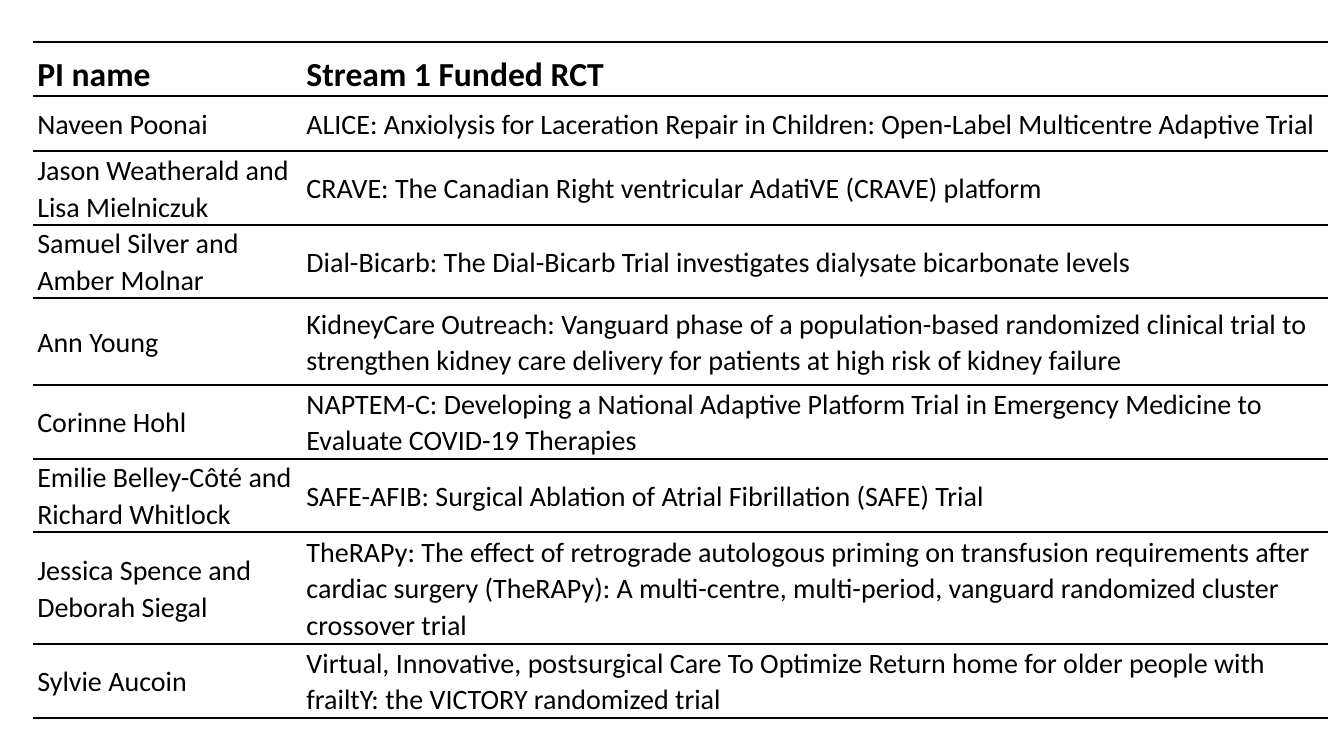
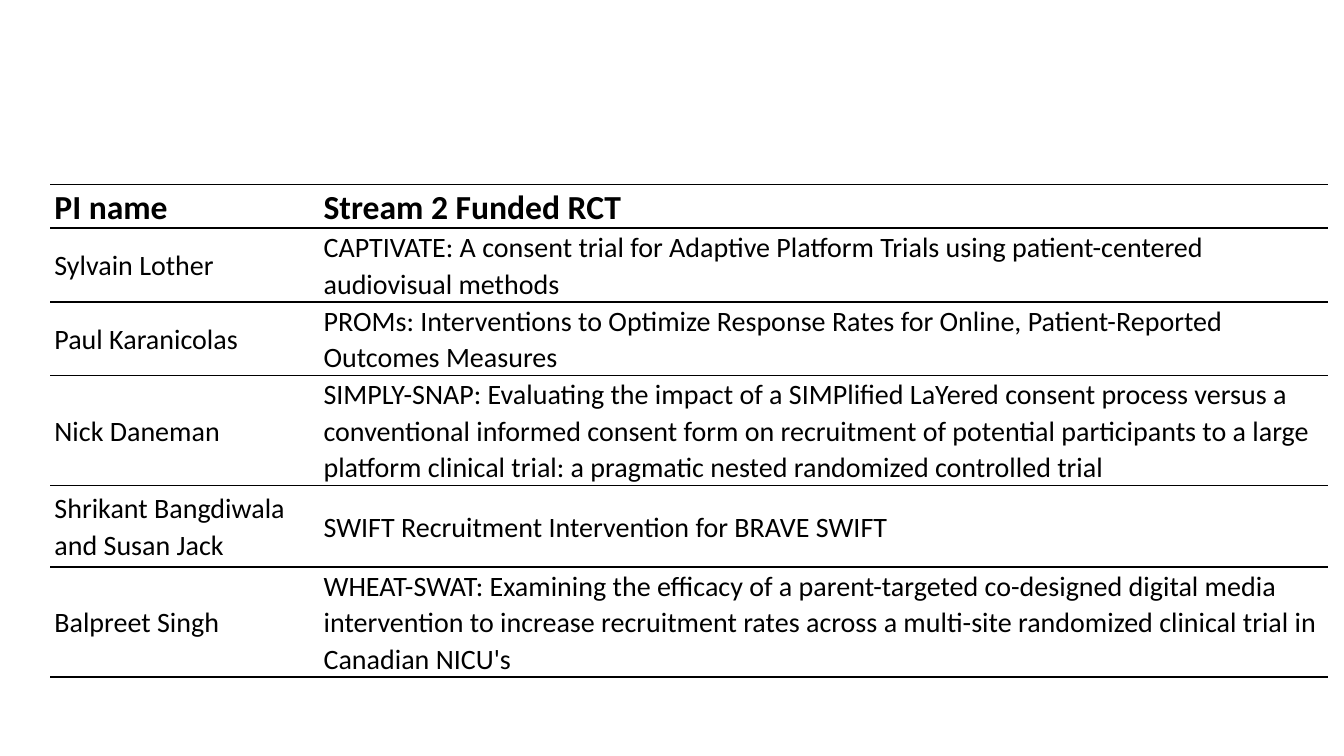
from pptx import Presentation, util as u
from pptx.dml.color import RGBColor
from pptx.enum import text
from pptx.oxml import ns
from lxml import etree

COLOURS = {"ink": "000000", "paper": "FFFFFF"}
FONT = "Calibri"
HEAD_SIZE, BODY_SIZE = 24, 20
LINE_SPACING = 1.07
RULE_WIDTH = 1.5
SIDE_INSET = 0.04
NAME_COLUMN = 2.67

STREAM_1 = [
    (0.53, "PI name", "Stream 1 Funded RCT"),
    (0.55, "Naveen Poonai",
     "ALICE: Anxiolysis for Laceration Repair in Children: Open-Label Multicentre Adaptive Trial"),
    (0.73, "Jason Weatherald and Lisa Mielniczuk",
     "CRAVE: The Canadian Right ventricular AdatiVE (CRAVE) platform"),
    (0.73, "Samuel Silver and Amber Molnar",
     "Dial-Bicarb: The Dial-Bicarb Trial investigates dialysate bicarbonate levels"),
    (0.86, "Ann Young",
     "KidneyCare Outreach: Vanguard phase of a population-based randomized clinical trial to\n"
     "strengthen kidney care delivery for patients at high risk of kidney failure"),
    (0.73, "Corinne Hohl",
     "NAPTEM-C: Developing a National Adaptive Platform Trial in Emergency Medicine to\n"
     "Evaluate COVID-19 Therapies"),
    (0.73, "Emilie Belley-Côté and Richard Whitlock",
     "SAFE-AFIB: Surgical Ablation of Atrial Fibrillation (SAFE) Trial"),
    (1.11, "Jessica Spence and Deborah Siegal",
     "TheRAPy: The effect of retrograde autologous priming on transfusion requirements after\n"
     "cardiac surgery (TheRAPy): A multi-centre, multi-period, vanguard randomized cluster\n"
     "crossover trial"),
    (0.73, "Sylvie Aucoin",
     "Virtual, Innovative, postsurgical Care To Optimize Return home for older people with\n"
     "frailtY: the VICTORY randomized trial"),
]

STREAM_2 = [
    (0.43, "PI name", "Stream 2 Funded RCT"),
    (0.73, "Sylvain Lother",
     "CAPTIVATE: A consent trial for Adaptive Platform Trials using patient-centered\n"
     "audiovisual methods"),
    (0.73, "Paul Karanicolas",
     "PROMs: Interventions to Optimize Response Rates for Online, Patient-Reported\n"
     "Outcomes Measures"),
    (1.09, "Nick Daneman",
     "SIMPLY-SNAP: Evaluating the impact of a SIMPlified LaYered consent process versus a\n"
     "conventional informed consent form on recruitment of potential participants to a large\n"
     "platform clinical trial: a pragmatic nested randomized controlled trial"),
    (0.81, "Shrikant Bangdiwala and Susan Jack",
     "SWIFT Recruitment Intervention for BRAVE SWIFT"),
    (1.09, "Balpreet Singh",
     "WHEAT-SWAT: Examining the efficacy of a parent-targeted co-designed digital media\n"
     "intervention to increase recruitment rates across a multi-site randomized clinical trial in\n"
     "Canadian NICU's"),
]


def rule_cell(cell):
    """Draw lines above and below a cell and none at its sides."""
    props = cell._tc.get_or_add_tcPr()
    for side in ("lnL", "lnR", "lnT", "lnB"):
        line = etree.SubElement(props, ns.qn(f"a:{side}"), w=str(u.Pt(RULE_WIDTH)))
        if side in ("lnL", "lnR"):
            etree.SubElement(line, ns.qn("a:noFill"))
        else:
            fill = etree.SubElement(line, ns.qn("a:solidFill"))
            etree.SubElement(fill, ns.qn("a:srgbClr"), val=COLOURS["ink"])


def fill_cell(cell, words, is_head):
    """Write one cell in the heading or body style."""
    rule_cell(cell)
    cell.fill.background()
    cell.margin_left = cell.margin_right = u.Inches(SIDE_INSET)
    cell.margin_top = cell.margin_bottom = 0
    anchor = text.MSO_ANCHOR
    cell.vertical_anchor = anchor.BOTTOM if is_head else anchor.MIDDLE
    cell.text_frame.text = words
    for para in cell.text_frame.paragraphs:
        para.line_spacing = LINE_SPACING
        para.font.name = FONT
        para.font.size = u.Pt(HEAD_SIZE if is_head else BODY_SIZE)
        para.font.bold = is_head
        para.font.color.rgb = RGBColor.from_string(COLOURS["ink"])


def add_trial_slide(deck, left, top, width, trials):
    """Add a slide with a ruled table of investigators and trials."""
    page = deck.slides.add_slide(deck.slide_layouts[6])
    page.background.fill.solid()
    page.background.fill.fore_color.rgb = RGBColor.from_string(COLOURS["paper"])
    height = sum(row_height for row_height, *_ in trials)
    box = [u.Inches(length) for length in (left, top, width, height)]
    table = page.shapes.add_table(len(trials), 2, *box).table
    table.first_row = table.horz_banding = False
    for column, share in zip(table.columns, (NAME_COLUMN, width - NAME_COLUMN)):
        column.width = u.Inches(share)
    for index, (row_height, *entries) in enumerate(trials):
        row = table.rows[index]
        row.height = u.Inches(row_height)
        for cell, words in zip(row.cells, entries):
            fill_cell(cell, words, is_head=index == 0)


def main():
    """Build and save the deck."""
    deck = Presentation()
    deck.slide_width, deck.slide_height = u.Inches(13.33), u.Inches(7.5)
    add_trial_slide(deck, 0.33, 0.42, 12.84, STREAM_1)
    add_trial_slide(deck, 0.5, 1.83, 12.67, STREAM_2)
    deck.save("out.pptx")


if __name__ == "__main__":
    main()
